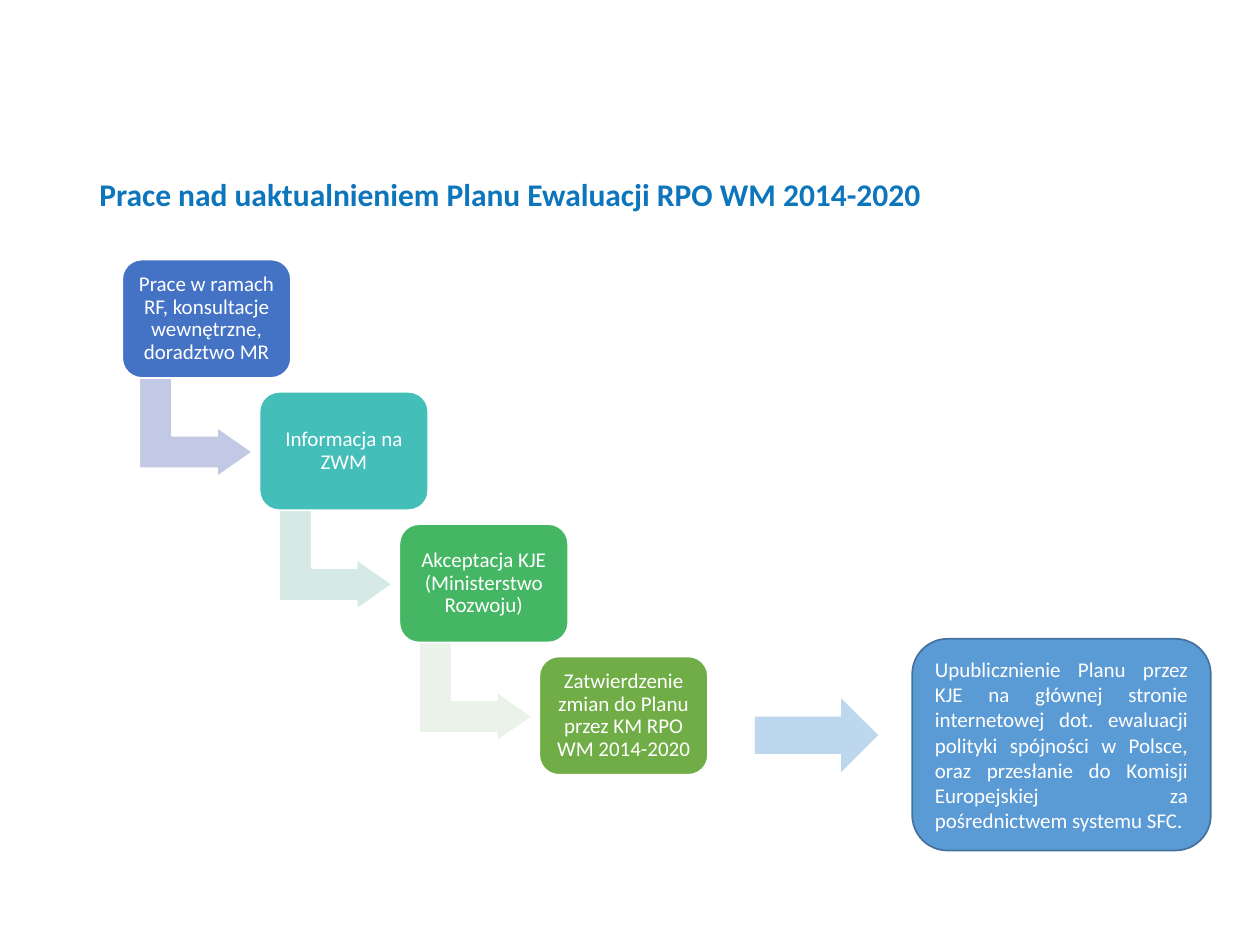
from pptx import Presentation
from pptx import util as u
from pptx.dml.color import RGBColor
from pptx.enum import shapes, text

COLORS = {
    "title": "0C75BB", "white": "FFFFFF",
    "result": "5B9BD5", "result_line": "43739E", "result_arrow": "BDD7EE",
}
FONT = "Calibri"
STEP_WIDTH, STEP_HEIGHT, STEP_DROP = 1.34, 0.94, 1.05

# Left edge, text, fill, and fill of the arrow to the next step
STEPS = [
    (0.97, "Prace w ramach RF, konsultacje wewnętrzne, doradztwo MR", "4472C4", "C1C9E4"),
    (2.06, "Informacja na ZWM", "43BEB9", "D6EAE5"),
    (3.17, "Akceptacja KJE (Ministerstwo Rozwoju)", "45B664", "EBF2E9"),
    (4.28, "Zatwierdzenie zmian do Planu przez KM RPO WM 2014-2020", "70AD47", None),
]
RESULT = ("Upublicznienie Planu przez KJE na głównej stronie internetowej dot. ewaluacji "
          "polityki spójności w Polsce, oraz przesłanie do Komisji Europejskiej "
          "za pośrednictwem systemu SFC.")


def add_shape(slide, kind, box, fill, line=None):
    shape = slide.shapes.add_shape(kind, *map(u.Inches, box))
    shape.shadow.inherit = False
    shape.fill.solid()
    shape.fill.fore_color.rgb = RGBColor.from_string(fill)
    if line:
        shape.line.color.rgb = RGBColor.from_string(line)
        shape.line.width = u.Pt(1)
    else:
        shape.line.fill.background()
    return shape


def write(shape, words, size=12, color=COLORS["white"], bold=False,
          align=text.PP_ALIGN.CENTER, spacing=None, inset=None):
    frame = shape.text_frame
    frame.word_wrap = True
    frame.vertical_anchor = text.MSO_ANCHOR.MIDDLE
    if inset is not None:
        frame.margin_left = frame.margin_right = u.Inches(inset)
        frame.margin_top = frame.margin_bottom = u.Inches(inset)
    paragraph = frame.paragraphs[0]
    paragraph.alignment = align
    paragraph.line_spacing = spacing
    run = paragraph.add_run()
    run.text = words
    run.font.name, run.font.size, run.font.bold = FONT, u.Pt(size), bold
    run.font.color.rgb = RGBColor.from_string(color)


def add_title(slide, box):
    title = slide.shapes.add_textbox(*map(u.Inches, box))
    write(title, "Prace nad uaktualnieniem Planu Ewaluacji RPO WM 2014-2020",
          size=18, color=COLORS["title"], bold=True,
          align=text.PP_ALIGN.LEFT, spacing=0.9)


def add_staircase(slide, top):
    for index, (left, words, fill, arrow_fill) in enumerate(STEPS):
        step_top = top + index * STEP_DROP
        # Bent arrow, placed relative to the next step
        if arrow_fill:
            next_left = STEPS[index + 1][0]
            box = (next_left - 0.9, step_top + STEP_DROP - 0.17, 0.79, 0.9)
            arrow = add_shape(slide, shapes.MSO_SHAPE.BENT_UP_ARROW, box,
                              arrow_fill, COLORS["white"])
            arrow.rotation = 90
            for number, value in enumerate((0.328, 0.25, 0.358)):
                arrow.adjustments[number] = value
        # Step box
        step = add_shape(slide, shapes.MSO_SHAPE.ROUNDED_RECTANGLE,
                         (left, step_top, STEP_WIDTH, STEP_HEIGHT), fill, COLORS["white"])
        write(step, words, spacing=0.9, inset=0.05)


def add_result(slide, left, top):
    box = add_shape(slide, shapes.MSO_SHAPE.ROUNDED_RECTANGLE, (left, top, 2.37, 1.68),
                    COLORS["result"], COLORS["result_line"])
    write(box, RESULT, align=text.PP_ALIGN.JUSTIFY)
    add_shape(slide, shapes.MSO_SHAPE.RIGHT_ARROW,
              (left - 1.25, top + 0.47, 0.98, 0.59), COLORS["result_arrow"])


def main():
    presentation = Presentation()
    presentation.slide_width, presentation.slide_height = u.Inches(10), u.Inches(7.5)
    slide = presentation.slides.add_slide(presentation.slide_layouts[6])
    add_title(slide, (0.69, 1.05, 8.62, 1.02))
    add_staircase(slide, 2.06)
    add_result(slide, 7.24, 5.07)
    presentation.save("out.pptx")


if __name__ == "__main__":
    main()
